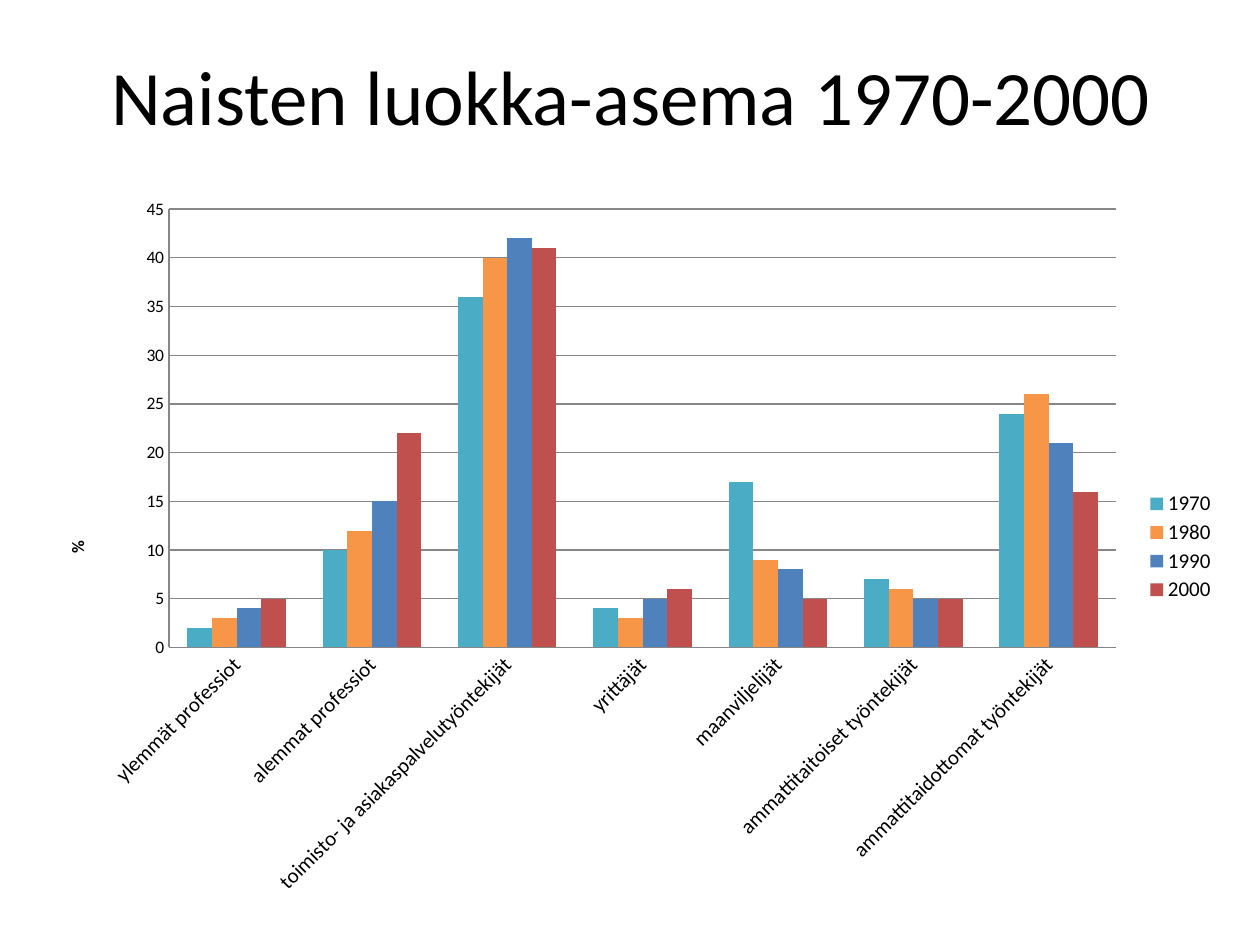
"""Build a slide with a column chart of women's class position, 1970-2000."""
from lxml import etree
from pptx import Presentation
from pptx.chart.data import CategoryChartData
from pptx.dml.color import RGBColor
from pptx.enum.chart import XL_CHART_TYPE, XL_LEGEND_POSITION, XL_TICK_MARK
from pptx.enum.text import MSO_ANCHOR, PP_ALIGN
from pptx.oxml.ns import qn
from pptx.util import Inches, Pt

COLUMNS = XL_CHART_TYPE.COLUMN_CLUSTERED
RIGHT = XL_LEGEND_POSITION.RIGHT
NO_TICK = XL_TICK_MARK.NONE
MIDDLE = MSO_ANCHOR.MIDDLE
CENTER = PP_ALIGN.CENTER

TITLE = "Naisten luokka-asema 1970-2000"
FONT = "Calibri"
BLACK, GRAY = "000000", "878787"
CATEGORIES = [
    "ylemmät professiot",
    "alemmat professiot",
    "toimisto- ja asiakaspalvelutyöntekijät",
    "yrittäjät",
    "maanviljelijät",
    "ammattitaitoiset työntekijät",
    "ammattitaidottomat työntekijät",
]
SERIES = [
    ("1970", "4BACC6", (2, 10, 36, 4, 17, 7, 24)),
    ("1980", "F79646", (3, 12, 40, 3, 9, 6, 26)),
    ("1990", "4F81BD", (4, 15, 42, 5, 8, 5, 21)),
    ("2000", "C0504D", (5, 22, 41, 6, 5, 5, 16)),
]
CHART_AREA = (0.28, 1.47, 9.45, 5.75)
PLOT_AREA = (1.34, 1.66, 7.52, 3.48)
LEGEND_AREA = (9.06, 3.87, 0.62, 0.94)
AXIS_TITLE_CORNER = (0.5, 4.27)


def color(value):
    return RGBColor.from_string(value)


def style_font(font, size, bold=False):
    font.name, font.size, font.bold = FONT, Pt(size), bold
    font.color.rgb = color(BLACK)


def style_line(line):
    line.color.rgb = color(GRAY)
    line.width = Pt(0.75)


def place(part, index, area, inner=False):
    """Give a chart part a manual layout from slide coordinates in inches."""
    for old in part.findall(qn("c:layout")):
        part.remove(old)
    layout = etree.Element(qn("c:layout"))
    manual = etree.SubElement(layout, qn("c:manualLayout"))
    left, top, width, height = CHART_AREA
    shares = [(area[0] - left) / width, (area[1] - top) / height]
    if len(area) == 4:
        shares += [area[2] / width, area[3] / height]
    settings = [("layoutTarget", "inner")] if inner else []
    settings += [("xMode", "edge"), ("yMode", "edge")]
    settings += [(name, f"{share:.4f}") for name, share in zip("xywh", shares)]
    for name, value in settings:
        etree.SubElement(manual, qn(f"c:{name}")).set("val", value)
    part.insert(index, layout)


def add_title(page):
    box = page.shapes.add_textbox(Inches(0.51), Inches(0.13), Inches(9), Inches(1.25))
    frame = box.text_frame
    frame.text = TITLE
    frame.word_wrap = True
    frame.vertical_anchor = MIDDLE
    para = frame.paragraphs[0]
    para.alignment = CENTER
    style_font(para.runs[0].font, 44)


def add_class_chart(page):
    data = CategoryChartData()
    data.categories = CATEGORIES
    for name, _, values in SERIES:
        data.add_series(name, values)
    area = [Inches(value) for value in CHART_AREA]
    chart = page.shapes.add_chart(COLUMNS, *area, data).chart
    chart.has_title = False
    style_font(chart.font, 10)

    plot = chart.plots[0]
    plot.gap_width, plot.overlap = 150, 0
    plot.vary_by_categories = False
    for series, (_, fill, _) in zip(plot.series, SERIES):
        series.format.fill.solid()
        series.format.fill.fore_color.rgb = color(fill)

    for axis, size in ((chart.category_axis, 12), (chart.value_axis, 10)):
        axis.major_tick_mark = axis.minor_tick_mark = NO_TICK
        style_font(axis.tick_labels.font, size)
        style_line(axis.format.line)
    labels = chart.category_axis._element.find(qn("c:txPr"))
    labels.find(qn("a:bodyPr")).set("rot", "-2700000")

    scale = chart.value_axis
    scale.minimum_scale, scale.maximum_scale, scale.major_unit = 0, 45, 5
    scale.has_major_gridlines = True
    style_line(scale.major_gridlines.format.line)
    frame = scale.axis_title.text_frame
    frame.text = "%"
    frame._txBody.find(qn("a:bodyPr")).set("rot", "-5400000")
    style_font(frame.paragraphs[0].runs[0].font, 10, True)

    chart.has_legend = True
    chart.legend.position = RIGHT
    chart.legend.include_in_layout = False
    style_font(chart.legend.font, 12)

    plot_area = next(chart._chartSpace.iter(qn("c:plotArea")))
    place(plot_area, 0, PLOT_AREA, inner=True)
    place(chart.legend._element, 1, LEGEND_AREA)
    place(scale.axis_title._element, 1, AXIS_TITLE_CORNER)


def main():
    deck = Presentation()
    deck.slide_width, deck.slide_height = Inches(10), Inches(7.5)
    page = deck.slides.add_slide(deck.slide_layouts[6])
    add_title(page)
    add_class_chart(page)
    deck.save("out.pptx")


if __name__ == "__main__":
    main()
